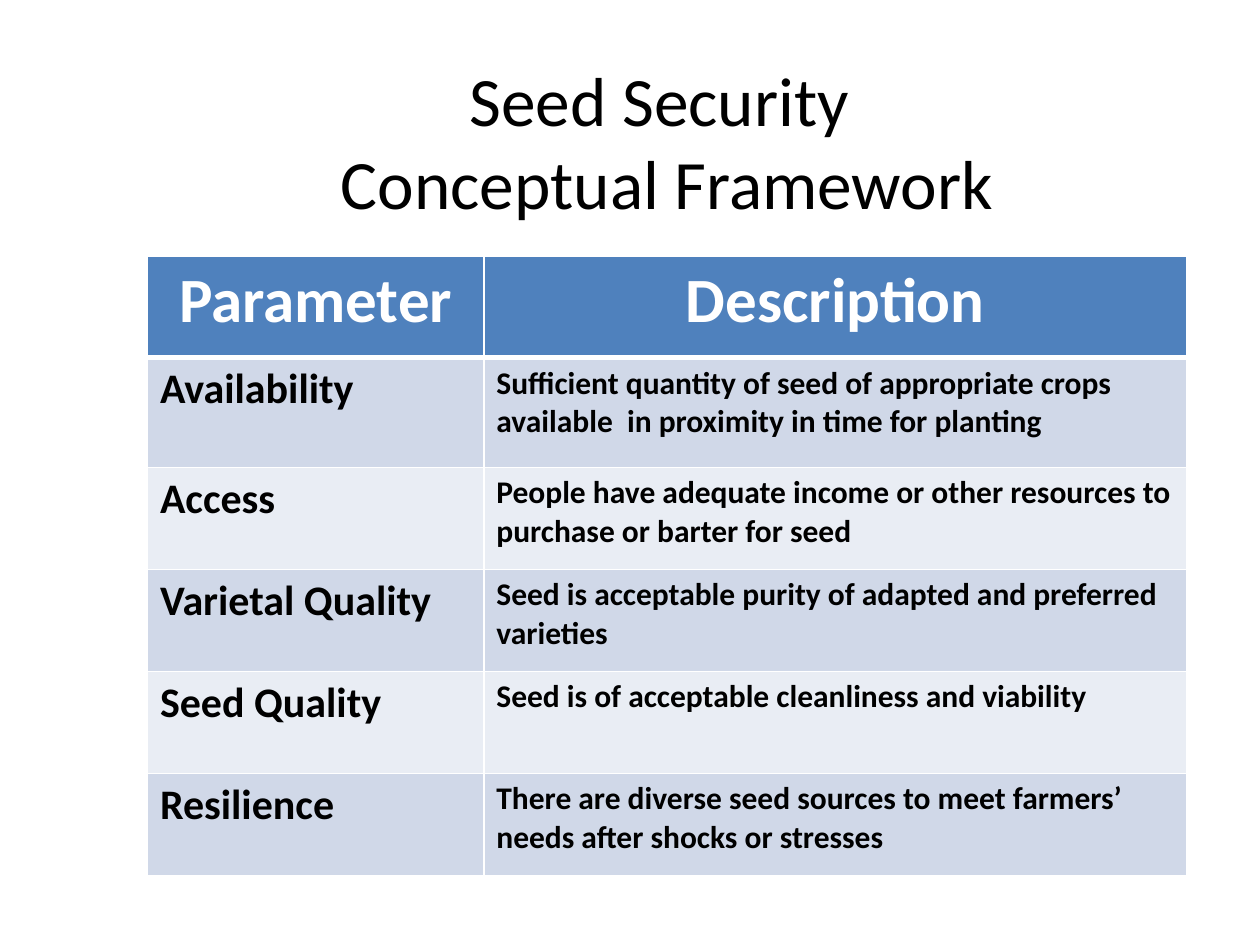
import pptx
import pptx.util
import pptx.dml.color
import pptx.enum.text
import pptx.oxml
import pptx.oxml.ns

Inches = pptx.util.Inches
Pt = pptx.util.Pt
ALIGN = pptx.enum.text.PP_ALIGN
ANCHOR = pptx.enum.text.MSO_ANCHOR

COLORS = {
    "ink": "000000",
    "white": "FFFFFF",
    "head": "4F81BD",
    "odd": "D0D8E8",
    "even": "E9EDF4",
}
LEFT, WIDTH = 1.17, 8.25
COLS = [2.67, 5.58]
ROWS = [0.81, 0.87, 0.81, 0.81, 0.81, 0.81]
HEADS = ["Parameter", "Description"]
ITEMS = [
    ("Availability", "Sufficient quantity of seed of appropriate crops "
                     "available  in proximity in time for planting"),
    ("Access", "People have adequate income or other resources to "
               "purchase or barter for seed"),
    ("Varietal Quality", "Seed is acceptable purity of adapted and "
                         "preferred varieties"),
    ("Seed Quality", "Seed is of acceptable cleanliness and viability"),
    ("Resilience", "There are diverse seed sources to meet farmers’ "
                   "needs after shocks or stresses"),
]


def color(name):
    return pptx.dml.color.RGBColor.from_string(COLORS[name])


class Deck:
    """Holds the style and the current slide."""

    font = "Calibri"

    def __init__(self, wide, high):
        self.prs = pptx.Presentation()
        self.prs.slide_width = Inches(wide)
        self.prs.slide_height = Inches(high)
        self.slide = self.prs.slides.add_slide(self.prs.slide_layouts[5])

    def run(self, para, text, size, ink="ink", bold=False):
        run = para.add_run()
        run.text = text
        run.font.name = self.font
        run.font.size = Pt(size)
        run.font.bold = bold
        run.font.color.rgb = color(ink)

    def title(self, lines, left, top, wide, high, size):
        shape = self.slide.shapes.title
        shape.left, shape.top = Inches(left), Inches(top)
        shape.width, shape.height = Inches(wide), Inches(high)
        frame = shape.text_frame
        frame.word_wrap = True
        frame.auto_size = pptx.enum.text.MSO_AUTO_SIZE.NONE
        frame.vertical_anchor = ANCHOR.MIDDLE
        para = frame.paragraphs[0]
        para.alignment = ALIGN.CENTER
        for num, line in enumerate(lines):
            if num:
                para.add_line_break()
            self.run(para, line, size)

    def edges(self, cell, base):
        props = cell._tc.get_or_add_tcPr()
        sides = {"L": 1, "R": 1, "T": 1, "B": base}
        for spot, (side, size) in enumerate(sides.items()):
            props.insert(spot, pptx.oxml.parse_xml(
                f'<a:ln{side} {pptx.oxml.ns.nsdecls("a")} w="{Pt(size)}">'
                f'<a:solidFill><a:srgbClr val="{COLORS["white"]}"/>'
                f'</a:solidFill></a:ln{side}>'))

    def cell(self, cell, text, size, fill, ink="ink", align=ALIGN.LEFT, base=1):
        cell.fill.solid()
        cell.fill.fore_color.rgb = color(fill)
        para = cell.text_frame.paragraphs[0]
        para.alignment = align
        self.run(para, text, size, ink, bold=True)
        self.edges(cell, base)

    def table(self, heads, items, left, top, cols, rows):
        grid = self.slide.shapes.add_table(
            len(rows), len(cols), Inches(left), Inches(top),
            Inches(sum(cols)), Inches(sum(rows))).table
        for col, wide in zip(grid.columns, cols):
            col.width = Inches(wide)
        for row, high in zip(grid.rows, rows):
            row.height = Inches(high)
        # Header row
        for col, text in enumerate(heads):
            self.cell(grid.cell(0, col), text, 36, "head", "white",
                      ALIGN.CENTER, base=3)
        # Banded body rows
        for row, item in enumerate(items, 1):
            fill = "odd" if row % 2 else "even"
            for col, (text, size) in enumerate(zip(item, (24, 18))):
                self.cell(grid.cell(row, col), text, size, fill)


def main():
    deck = Deck(10, 7.5)
    # Title
    deck.title(["Seed Security ", "Conceptual Framework"],
               LEFT, 0.33, WIDTH, 1.57, 39.6)
    # Framework table
    deck.table(HEADS, ITEMS, LEFT, 2.03, COLS, ROWS)
    deck.prs.save("out.pptx")


if __name__ == "__main__":
    main()
